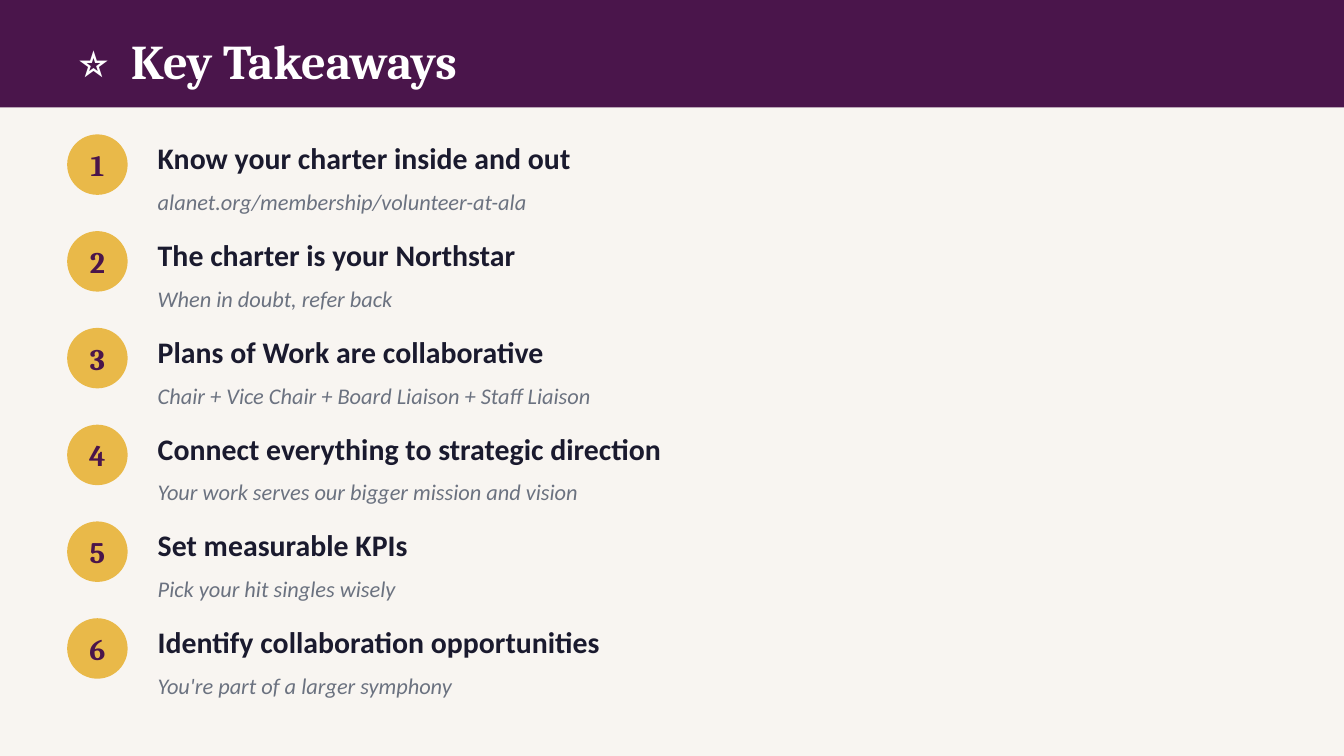
from lxml import etree
from pptx import Presentation
from pptx import util as u
from pptx.dml.color import RGBColor
from pptx.enum import shapes, text
from pptx.oxml.ns import qn

PLUM, GOLD, CREAM = "4A154B", "E9B949", "F8F5F1"
WHITE, INK, GREY = "FFFFFF", "1A1A2E", "6B7280"
HEADING_FONT, BODY_FONT = "Cambria", "Calibri"

MARGIN = 48
FIRST_ROW_TOP, ROW_PITCH = 96, 69.12
BADGE_SIZE, LINE_HEIGHT = 43.2, 33.6
TEXT_LEFT = 105.6

TAKEAWAYS = [
    ("Know your charter inside and out", "alanet.org/membership/volunteer-at-ala"),
    ("The charter is your Northstar", "When in doubt, refer back"),
    ("Plans of Work are collaborative",
     "Chair + Vice Chair + Board Liaison + Staff Liaison"),
    ("Connect everything to strategic direction",
     "Your work serves our bigger mission and vision"),
    ("Set measurable KPIs", "Pick your hit singles wisely"),
    ("Identify collaboration opportunities", "You're part of a larger symphony"),
]


def paint(color_format, hex_color):
    color_format.rgb = RGBColor.from_string(hex_color)


def add_block(slide, preset, left, top, width, height, color):
    block = slide.shapes.add_shape(
        preset, u.Pt(left), u.Pt(top), u.Pt(width), u.Pt(height))
    block.shadow.inherit = False
    block.fill.solid()
    paint(block.fill.fore_color, color)
    block.line.fill.background()


def add_label(slide, wording, left, top, width, height, size, font_name, color,
              bold=False, italic=False, align=text.PP_ALIGN.LEFT, tab_stop=None):
    """Add one line of vertically centred text; tab_stop is in points."""
    label = slide.shapes.add_textbox(
        u.Pt(left), u.Pt(top), u.Pt(width), u.Pt(height))
    frame = label.text_frame
    frame.word_wrap = True
    frame.vertical_anchor = text.MSO_ANCHOR.MIDDLE
    frame.text = wording
    paragraph = frame.paragraphs[0]
    paragraph.alignment = align
    if tab_stop:
        tabs = etree.SubElement(paragraph._p.get_or_add_pPr(), qn("a:tabLst"))
        etree.SubElement(tabs, qn("a:tab"), pos=str(u.Pt(tab_stop)), algn="l")
    for run in paragraph.runs:
        run.font.name = font_name
        run.font.size = u.Pt(size)
        run.font.bold = bold
        run.font.italic = italic
        paint(run.font.color, color)


def add_header(slide):
    add_block(slide, shapes.MSO_SHAPE.RECTANGLE, 0, 0, 960, 76.8, PLUM)
    add_label(slide, "⭐\tKey Takeaways", MARGIN, 19.2, 864, 48,
              34.67, HEADING_FONT, WHITE, bold=True, tab_stop=38.5)


def add_takeaway(slide, number, headline, detail):
    top = FIRST_ROW_TOP + (number - 1) * ROW_PITCH
    add_block(slide, shapes.MSO_SHAPE.OVAL, MARGIN, top,
              BADGE_SIZE, BADGE_SIZE, GOLD)
    add_label(slide, str(number), MARGIN, top + (BADGE_SIZE - LINE_HEIGHT) / 2,
              BADGE_SIZE, LINE_HEIGHT, 21.33, HEADING_FONT, PLUM,
              bold=True, align=text.PP_ALIGN.CENTER)
    add_label(slide, headline, TEXT_LEFT, top, 480, LINE_HEIGHT,
              21.33, BODY_FONT, INK, bold=True)
    add_label(slide, detail, TEXT_LEFT, top + LINE_HEIGHT, 768, 28.8,
              16, BODY_FONT, GREY, italic=True)


def main():
    deck = Presentation()
    deck.slide_width, deck.slide_height = u.Pt(960), u.Pt(540)
    slide = deck.slides.add_slide(deck.slide_layouts[6])
    slide.background.fill.solid()
    paint(slide.background.fill.fore_color, CREAM)
    add_header(slide)
    for number, (headline, detail) in enumerate(TAKEAWAYS, start=1):
        add_takeaway(slide, number, headline, detail)
    deck.save("out.pptx")


if __name__ == "__main__":
    main()
